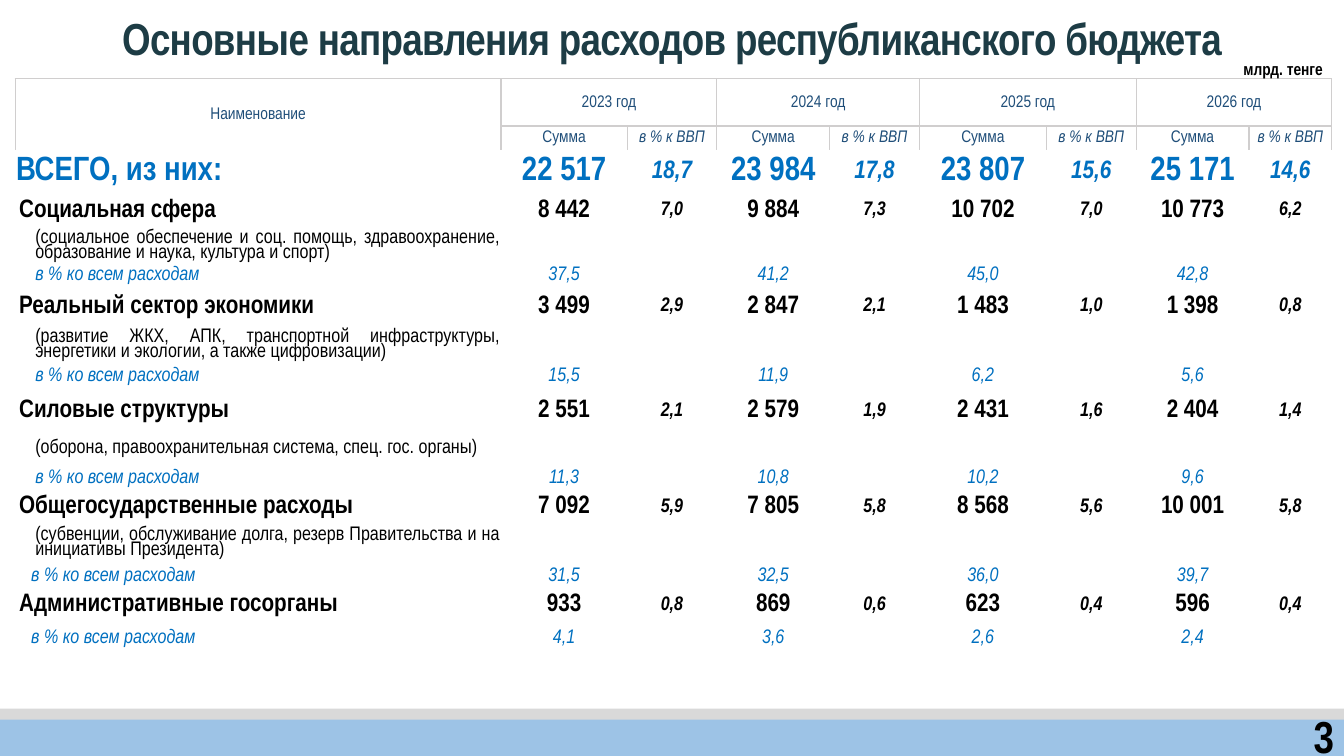
"""Build the slide with the main spending lines of the republican budget."""
from dataclasses import dataclass

from lxml.etree import SubElement
from pptx import Presentation
from pptx.dml.color import RGBColor
from pptx.enum.shapes import MSO_SHAPE
from pptx.enum.text import MSO_ANCHOR, MSO_AUTO_SIZE, PP_ALIGN
from pptx.oxml.ns import qn
from pptx.slide import Slide
from pptx.table import Table, _Cell as Cell
from pptx.text.text import TextFrame
from pptx.util import Inches, Pt

FONT = "Arial Narrow"
BLACK = RGBColor(0x00, 0x00, 0x00)
TITLE_TEAL = RGBColor(0x1D, 0x3C, 0x45)
HEADER_BLUE = RGBColor(0x1F, 0x4E, 0x79)
ACCENT_BLUE = RGBColor(0x00, 0x70, 0xC0)
FOOTER_BLUE = RGBColor(0x9D, 0xC3, 0xE6)
FOOTER_GRAY = RGBColor(0xD9, 0xD9, 0xD9)
BORDER_GRAY = "D0CECE"

YEARS = ("2023 год", "2024 год", "2025 год", "2026 год")
SHARE_LABEL = "в % ко всем расходам"
COLUMN_WIDTHS = (4.82, 1.25, 0.89, 1.12, 0.89, 1.26, 0.89, 1.12, 0.82)
HEADER_HEIGHTS = (0.47, 0.24)
TOTAL_HEIGHT = 0.42


@dataclass(frozen=True)
class Style:
    size: int
    color: RGBColor
    bold: bool = False
    italic: bool = False
    align: PP_ALIGN = PP_ALIGN.CENTER
    line_spacing: float = 1.0
    indent: float = 0.01


@dataclass(frozen=True)
class Sector:
    name: str
    amounts: tuple[str, ...]
    gdp_shares: tuple[str, ...]
    detail: str
    shares: tuple[str, ...]
    heights: tuple[float, ...]
    share_indent: float = 0.2


HEADER = Style(12, HEADER_BLUE)
HEADER_ITALIC = Style(12, HEADER_BLUE, italic=True)
TOTAL_NAME = Style(24, ACCENT_BLUE, bold=True, align=PP_ALIGN.LEFT)
TOTAL_AMOUNT = Style(24, ACCENT_BLUE, bold=True)
TOTAL_GDP = Style(18, ACCENT_BLUE, bold=True, italic=True)
SECTOR_NAME = Style(18, BLACK, bold=True, align=PP_ALIGN.LEFT, indent=0.04)
SECTOR_AMOUNT = Style(18, BLACK, bold=True)
SECTOR_GDP = Style(14, BLACK, bold=True, italic=True)
DETAIL = Style(14, BLACK, align=PP_ALIGN.JUSTIFY, line_spacing=0.8, indent=0.2)
SHARE = Style(14, ACCENT_BLUE, italic=True)

TOTAL_AMOUNTS = ("22 517", "23 984", "23 807", "25 171")
TOTAL_GDP_SHARES = ("18,7", "17,8", "15,6", "14,6")
SECTORS = (
    Sector("Социальная сфера", ("8 442", "9 884", "10 702", "10 773"),
           ("7,0", "7,3", "7,0", "6,2"),
           "(социальное обеспечение и соц. помощь, здравоохранение, "
           "образование и наука, культура и спорт)",
           ("37,5", "41,2", "45,0", "42,8"), (0.35, 0.36, 0.22)),
    Sector("Реальный сектор экономики", ("3 499", "2 847", "1 483", "1 398"),
           ("2,9", "2,1", "1,0", "0,8"),
           "(развитие ЖКХ, АПК, транспортной инфраструктуры, "
           "энергетики и экологии, а также цифровизации)",
           ("15,5", "11,9", "6,2", "5,6"), (0.4, 0.37, 0.25)),
    Sector("Силовые структуры", ("2 551", "2 579", "2 431", "2 404"),
           ("2,1", "1,9", "1,6", "1,4"),
           "(оборона, правоохранительная система, спец. гос. органы)",
           ("11,3", "10,8", "10,2", "9,6"), (0.43, 0.32, 0.26)),
    Sector("Общегосударственные расходы", ("7 092", "7 805", "8 568", "10 001"),
           ("5,9", "5,8", "5,6", "5,8"),
           "(субвенции, обслуживание долга, резерв Правительства и на "
           "инициативы Президента)",
           ("31,5", "32,5", "36,0", "39,7"), (0.32, 0.4, 0.25), 0.16),
    Sector("Административные госорганы", ("933", "869", "623", "596"),
           ("0,8", "0,6", "0,4", "0,4"), "",
           ("4,1", "3,6", "2,6", "2,4"), (0.33, 0.32), 0.16),
)


def write(frame: TextFrame, text: str, style: Style) -> None:
    """Put one styled paragraph into a text frame."""
    paragraph = frame.paragraphs[0]
    paragraph.text = text
    paragraph.alignment = style.align
    paragraph.line_spacing = style.line_spacing
    font = paragraph.font
    font.name, font.size = FONT, Pt(style.size)
    font.bold, font.italic = style.bold, style.italic
    font.color.rgb = style.color


def format_frame(frame: TextFrame, text: str, style: Style) -> None:
    """Fix the wrapping and anchor of a frame and write its text."""
    frame.word_wrap = True
    frame.auto_size = MSO_AUTO_SIZE.NONE
    frame.vertical_anchor = MSO_ANCHOR.MIDDLE
    write(frame, text, style)


def add_label(slide: Slide, box: tuple[float, ...], text: str, style: Style) -> None:
    """Add a text box."""
    shape = slide.shapes.add_textbox(*map(Inches, box))
    format_frame(shape.text_frame, text, style)


def add_band(slide: Slide, top: float, height: float, color: RGBColor) -> None:
    """Add a full-width footer band."""
    shape = slide.shapes.add_shape(
        MSO_SHAPE.RECTANGLE, 0, Inches(top), Inches(13.33), Inches(height))
    shape.shadow.inherit = False
    shape.fill.solid()
    shape.fill.fore_color.rgb = color
    shape.line.fill.background()


def add_borders(cell: Cell) -> None:
    """Draw a thin gray line on each side of a cell."""
    properties = cell._tc.get_or_add_tcPr()
    for side in ("a:lnL", "a:lnR", "a:lnT", "a:lnB"):
        line = SubElement(properties, qn(side), w=str(Pt(1)))
        fill = SubElement(line, qn("a:solidFill"))
        SubElement(fill, qn("a:srgbClr"), val=BORDER_GRAY)


def fill_cell(cell: Cell, text: str, style: Style, indent: float | None = None) -> None:
    """Write a cell with its insets."""
    cell.margin_left = Inches(style.indent if indent is None else indent)
    cell.margin_right = cell.margin_top = Inches(0.01)
    cell.margin_bottom = 0
    cell.vertical_anchor = MSO_ANCHOR.MIDDLE
    write(cell.text_frame, text, style)


def fill_pairs(table: Table, row: int, amounts: tuple[str, ...], amount_style: Style,
               shares: tuple[str, ...], share_style: Style) -> None:
    """Write the two figures of every year in a row."""
    for year, (amount, share) in enumerate(zip(amounts, shares)):
        fill_cell(table.cell(row, 1 + 2 * year), amount, amount_style)
        fill_cell(table.cell(row, 2 + 2 * year), share, share_style)


def add_budget_table(slide: Slide) -> None:
    """Add the table of spending by sector and year."""
    heights = [*HEADER_HEIGHTS, TOTAL_HEIGHT]
    heights += [height for sector in SECTORS for height in sector.heights]
    table = slide.shapes.add_table(
        len(heights), len(COLUMN_WIDTHS), Inches(0.15), Inches(0.78),
        Inches(sum(COLUMN_WIDTHS)), Inches(sum(heights))).table
    table.first_row = table.horz_banding = False
    for column, width in zip(table.columns, COLUMN_WIDTHS):
        column.width = Inches(width)
    for index, height in enumerate(heights):
        table.rows[index].height = Inches(height)
        for cell in table.rows[index].cells:
            if index < len(HEADER_HEIGHTS):
                add_borders(cell)
            cell.fill.background()
            fill_cell(cell, "", SHARE)

    table.cell(0, 0).merge(table.cell(1, 0))
    fill_cell(table.cell(0, 0), "Наименование", HEADER)
    for column, year in zip(range(1, len(COLUMN_WIDTHS), 2), YEARS):
        table.cell(0, column).merge(table.cell(0, column + 1))
        fill_cell(table.cell(0, column), year, HEADER)
    fill_pairs(table, 1, ("Сумма",) * 4, HEADER, ("в % к ВВП",) * 4, HEADER_ITALIC)
    fill_cell(table.cell(2, 0), "ВСЕГО, из них:", TOTAL_NAME)
    fill_pairs(table, 2, TOTAL_AMOUNTS, TOTAL_AMOUNT, TOTAL_GDP_SHARES, TOTAL_GDP)

    row = 3
    for sector in SECTORS:
        fill_cell(table.cell(row, 0), sector.name, SECTOR_NAME)
        fill_pairs(table, row, sector.amounts, SECTOR_AMOUNT, sector.gdp_shares, SECTOR_GDP)
        if sector.detail:
            fill_cell(table.cell(row + 1, 0), sector.detail, DETAIL)
        row += len(sector.heights)
        label = table.cell(row - 1, 0)
        fill_cell(label, SHARE_LABEL, SHARE, sector.share_indent)
        label.text_frame.paragraphs[0].alignment = PP_ALIGN.LEFT
        fill_pairs(table, row - 1, sector.shares, SHARE, ("",) * 4, SHARE)


def main() -> None:
    """Build and save the presentation."""
    presentation = Presentation()
    presentation.slide_width, presentation.slide_height = Inches(13.33), Inches(7.5)
    slide = presentation.slides.add_slide(presentation.slide_layouts[5])
    add_band(slide, 7.12, 0.4, FOOTER_BLUE)
    add_band(slide, 7.03, 0.11, FOOTER_GRAY)
    add_label(slide, (11.9, 7.1, 1.43, 0.4), "3",
              Style(32, BLACK, bold=True, align=PP_ALIGN.RIGHT))
    title = slide.shapes.title
    title.left, title.top, title.width, title.height = map(Inches, (0, -0.02, 13.33, 0.87))
    format_frame(title.text_frame, "Основные направления расходов республиканского бюджета",
                 Style(32, TITLE_TEAL, bold=True, line_spacing=0.85))
    title.text_frame.paragraphs[0].runs[0].font._element.set("spc", "-50")
    add_budget_table(slide)
    add_label(slide, (11.4, 0.51, 1.82, 0.37), "млрд. тенге",
              Style(12, BLACK, bold=True, align=PP_ALIGN.RIGHT, line_spacing=0.9))
    presentation.save("out.pptx")


if __name__ == "__main__":
    main()
